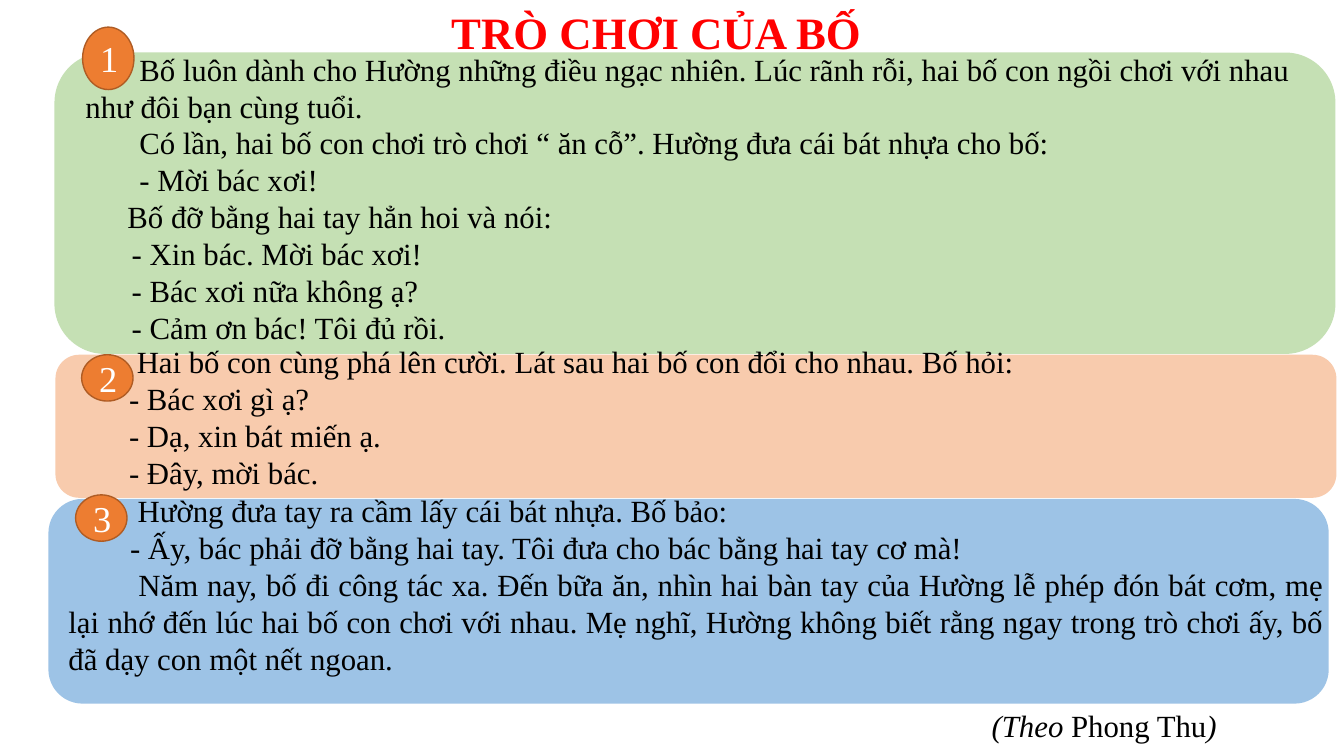
from pptx import Presentation
from pptx.dml.color import RGBColor
from pptx.enum.shapes import MSO_SHAPE
from pptx.enum.text import MSO_ANCHOR, PP_ALIGN
from pptx.util import Pt

ROUNDED, OVAL = MSO_SHAPE.ROUNDED_RECTANGLE, MSO_SHAPE.OVAL
LEFT, CENTER, JUSTIFY = PP_ALIGN.LEFT, PP_ALIGN.CENTER, PP_ALIGN.JUSTIFY
MIDDLE = MSO_ANCHOR.MIDDLE

BLACK = RGBColor(0x00, 0x00, 0x00)
WHITE = RGBColor(0xFF, 0xFF, 0xFF)
RED = RGBColor(0xFF, 0x00, 0x00)
GREEN = RGBColor(0xC5, 0xE0, 0xB4)
PEACH = RGBColor(0xF8, 0xCB, 0xAD)
BLUE = RGBColor(0x9D, 0xC3, 0xE6)
ORANGE = RGBColor(0xED, 0x7D, 0x31)
DARK_ORANGE = RGBColor(0xAF, 0x5C, 0x24)

FONT = "Times New Roman"
MARGIN = 2.2

presentation = Presentation()
presentation.slide_width, presentation.slide_height = Pt(960), Pt(540)
slide = presentation.slides.add_slide(presentation.slide_layouts[6])


def add_text(paragraph, text, size=22, color=BLACK, bold=False, italic=False):
    run = paragraph.add_run()
    run.text = text
    run.font.name = FONT
    run.font.size = Pt(size)
    run.font.color.rgb = color
    run.font.bold = bold
    run.font.italic = italic


def add_box(bounds, preset=None, fill=None, line=None):
    """Add a preset shape, or a wrapping text box when no preset is given."""
    lengths = [Pt(length) for length in bounds]
    if preset is None:
        box = slide.shapes.add_textbox(*lengths)
    else:
        box = slide.shapes.add_shape(preset, *lengths)
        box.shadow.inherit = False
        box.fill.solid()
        box.fill.fore_color.rgb = fill
        if line is None:
            box.line.fill.background()
        else:
            box.line.color.rgb = line
            box.line.width = Pt(1)
    box.text_frame.word_wrap = True
    return box


# Each part: panel, panel colour, text box, alignment, badge, (first-line indent, text)
story_parts = [
    ((38.9, 37.5, 915, 215.3), GREEN, (51.8, 32.4, 908, 220.3), LEFT, (59, 19.4, 36.7, 44.6), [
        (38.5, "Bố luôn dành cho Hường những điều ngạc nhiên. Lúc rãnh rỗi, hai bố con ngồi "
               "chơi với nhau như đôi bạn cùng tuổi."),
        (38.5, "Có lần, hai bố con chơi trò chơi “ ăn cỗ”. Hường đưa cái bát nhựa cho bố:"),
        (38.5, "- Mời bác xơi!"),
        (30, "Bố đỡ bằng hai tay hẳn hoi và nói:"),
        (33, "- Xin bác. Mời bác xơi!"),
        (33, "- Bác xơi nữa không ạ?"),
        (33, "- Cảm ơn bác! Tôi đủ rồi."),
    ]),
    ((39.6, 253.4, 915, 102.2), PEACH, (38.9, 241.2, 915, 113.8), JUSTIFY, (58.3, 253.4, 36.7, 33.1), [
        (49.5, "Hai bố con cùng phá lên cười. Lát sau hai bố con đổi cho nhau. Bố hỏi:"),
        (44, "- Bác xơi gì ạ?"),
        (44, "- Dạ, xin bát miến ạ."),
        (44, "- Đây, mời bác."),
    ]),
    ((34.6, 356.4, 914.5, 146.2), BLUE, (39.6, 347.8, 915, 140.4), JUSTIFY, (54, 353.5, 36.7, 33.1), [
        (49.5, "Hường đưa tay ra cầm lấy cái bát nhựa. Bố bảo:"),
        (44, "- Ấy, bác phải đỡ bằng hai tay. Tôi đưa cho bác bằng hai tay cơ mà!"),
        (50, "Năm nay, bố đi công tác xa. Đến bữa ăn, nhìn hai bàn tay của Hường lễ phép đón "
             "bát cơm, mẹ lại nhớ đến lúc hai bố con chơi với nhau. Mẹ nghĩ, Hường không biết "
             "rằng ngay trong trò chơi ấy, bố đã dạy con một nết ngoan."),
    ]),
]

# Panels go behind all text
for panel_bounds, panel_color, *_ in reversed(story_parts):
    add_box(panel_bounds, ROUNDED, panel_color)

for number, (_, _, text_bounds, alignment, badge_bounds, lines) in enumerate(story_parts, 1):
    story_frame = add_box(text_bounds).text_frame
    for index, (indent, text) in enumerate(lines):
        paragraph = story_frame.add_paragraph() if index else story_frame.paragraphs[0]
        paragraph.alignment = alignment
        paragraph.line_spacing = 1.0
        properties = paragraph._p.get_or_add_pPr()
        properties.set("marL", str(Pt(MARGIN)))
        properties.set("marR", str(Pt(MARGIN)))
        properties.set("indent", str(Pt(indent)))
        add_text(paragraph, text)

    badge_frame = add_box(badge_bounds, OVAL, ORANGE, DARK_ORANGE).text_frame
    badge_frame.vertical_anchor = MIDDLE
    badge_frame.paragraphs[0].alignment = CENTER
    add_text(badge_frame.paragraphs[0], str(number), size=26, color=WHITE)

title = add_box((68.4, 0, 800.6, 46)).text_frame.paragraphs[0]
title.alignment = CENTER
add_text(title, "TRÒ CHƠI CỦA BỐ", size=32, color=RED, bold=True)

author = add_box((701.3, 501.1, 235.4, 34)).text_frame.paragraphs[0]
add_text(author, "(Theo ", italic=True)
add_text(author, "Phong Thu")
add_text(author, ")", italic=True)

presentation.save("out.pptx")
